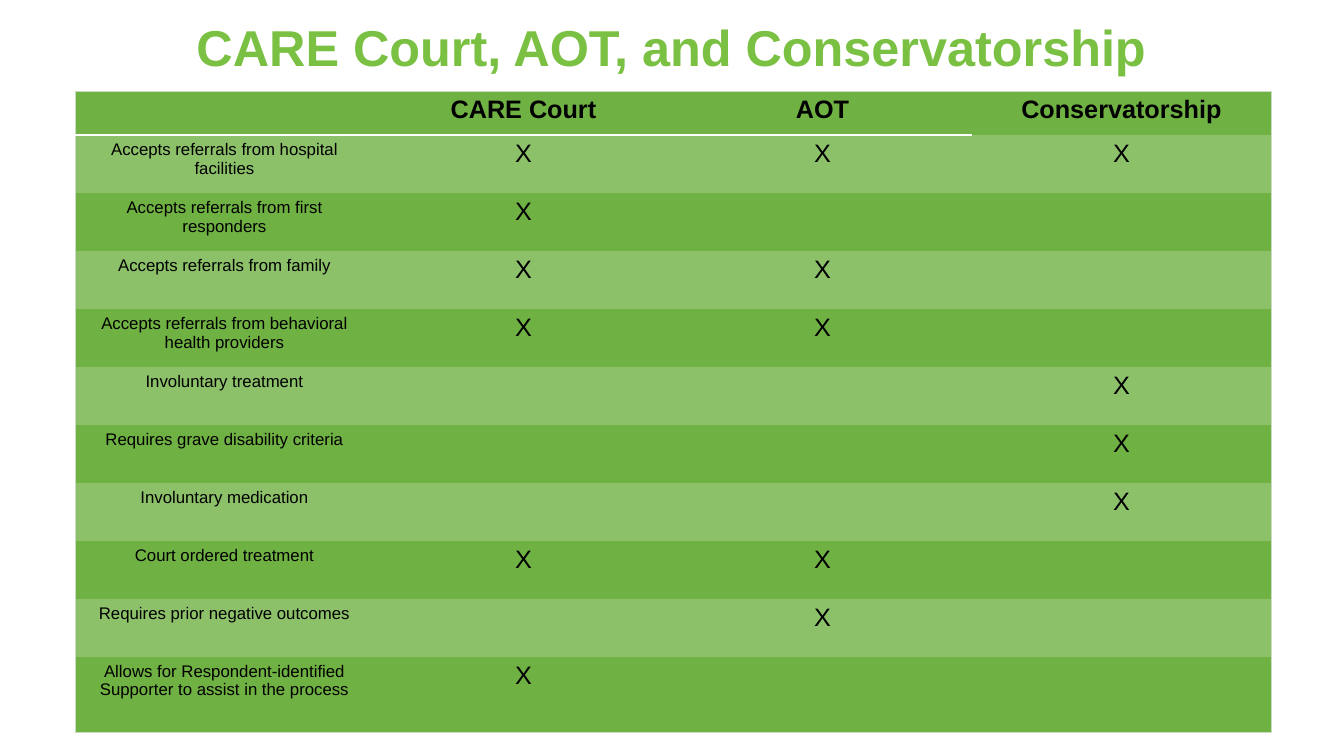
from lxml import etree
from pptx import Presentation
from pptx import util as u
from pptx.dml.color import RGBColor
from pptx.enum import text
from pptx.oxml.ns import qn

TITLE = "CARE Court, AOT, and Conservatorship"
HEADERS = ["", "CARE Court", "AOT", "Conservatorship"]
CRITERIA = [
    ("Accepts referrals from hospital facilities", "X", "X", "X"),
    ("Accepts referrals from first responders", "X", "", ""),
    ("Accepts referrals from family", "X", "X", ""),
    ("Accepts referrals from behavioral health providers", "X", "X", ""),
    ("Involuntary treatment", "", "", "X"),
    ("Requires grave disability criteria", "", "", "X"),
    ("Involuntary medication", "", "", "X"),
    ("Court ordered treatment", "X", "X", ""),
    ("Requires prior negative outcomes", "", "X", ""),
    ("Allows for Respondent-identified Supporter to assist in the process", "X", "", ""),
]
ROWS = [HEADERS, *CRITERIA]

FONT = "Arial"
NO_STYLE = "{2D5ABB26-0587-4C30-8999-92F81FD0307C}"
BLACK = RGBColor(0x00, 0x00, 0x00)
WHITE = RGBColor(0xFF, 0xFF, 0xFF)
TITLE_GREEN = RGBColor(0x7A, 0xC1, 0x43)
DARK_GREEN = RGBColor(0x6F, 0xB1, 0x43)
LIGHT_GREEN = RGBColor(0x8C, 0xC1, 0x69)
EDGE = RGBColor(0xC9, 0xDB, 0xC1)

LEFT, TOP, COL_W = 75, 91, 299
HEAD_H, ROW_H, LAST_H = 44, 58, 76


def px(n):
    return u.Emu(round(n * 914400 / 100.8))


def write(tf, words, size, color, bold):
    tf.text = words
    p = tf.paragraphs[0]
    p.alignment = text.PP_ALIGN.CENTER
    for font in [p.font] + [r.font for r in p.runs]:
        font.name, font.size, font.bold = FONT, u.Pt(size), bold
        font.color.rgb = color
    return p


def add_border(cell, side, color, width):
    ln = etree.SubElement(cell._tc.get_or_add_tcPr(), qn("a:ln" + side), w=str(u.Pt(width)))
    fill = etree.SubElement(ln, qn("a:solidFill"))
    etree.SubElement(fill, qn("a:srgbClr"), val=str(color))


prs = Presentation()
prs.slide_width, prs.slide_height = px(1344), px(756)
s = prs.slides.add_slide(prs.slide_layouts[6])

heights = [HEAD_H] + [ROW_H] * (len(CRITERIA) - 1) + [LAST_H]
last_row, last_col = len(ROWS) - 1, len(HEADERS) - 1
frame = s.shapes.add_table(len(ROWS), len(HEADERS), px(LEFT), px(TOP),
                           px(COL_W * len(HEADERS)), px(sum(heights)))
tbl = frame.table
tbl.first_row = tbl.horz_banding = False
tbl._tbl.tblPr.find(qn("a:tableStyleId")).text = NO_STYLE
for col in tbl.columns:
    col.width = px(COL_W)

for i, (row, height) in enumerate(zip(ROWS, heights)):
    tbl.rows[i].height = px(height)
    for j, words in enumerate(row):
        cell = tbl.cell(i, j)
        size = 12 if i and j == 0 else 18
        write(cell.text_frame, words, size, BLACK, i == 0)
        if j == 0:
            add_border(cell, "L", EDGE, 0.5)
        if j == last_col:
            add_border(cell, "R", EDGE, 0.5)
        if i == 0:
            add_border(cell, "T", EDGE, 0.5)
            if j < last_col:
                add_border(cell, "B", WHITE, 1.5)
        if i == last_row:
            add_border(cell, "B", EDGE, 0.5)
        cell.fill.solid()
        cell.fill.fore_color.rgb = LIGHT_GREEN if i % 2 else DARK_GREEN

tf = s.shapes.add_textbox(px(92), px(18), px(1159), px(146)).text_frame
tf.word_wrap = True
write(tf, TITLE, 36, TITLE_GREEN, True).line_spacing = 0.9

prs.save("out.pptx")
